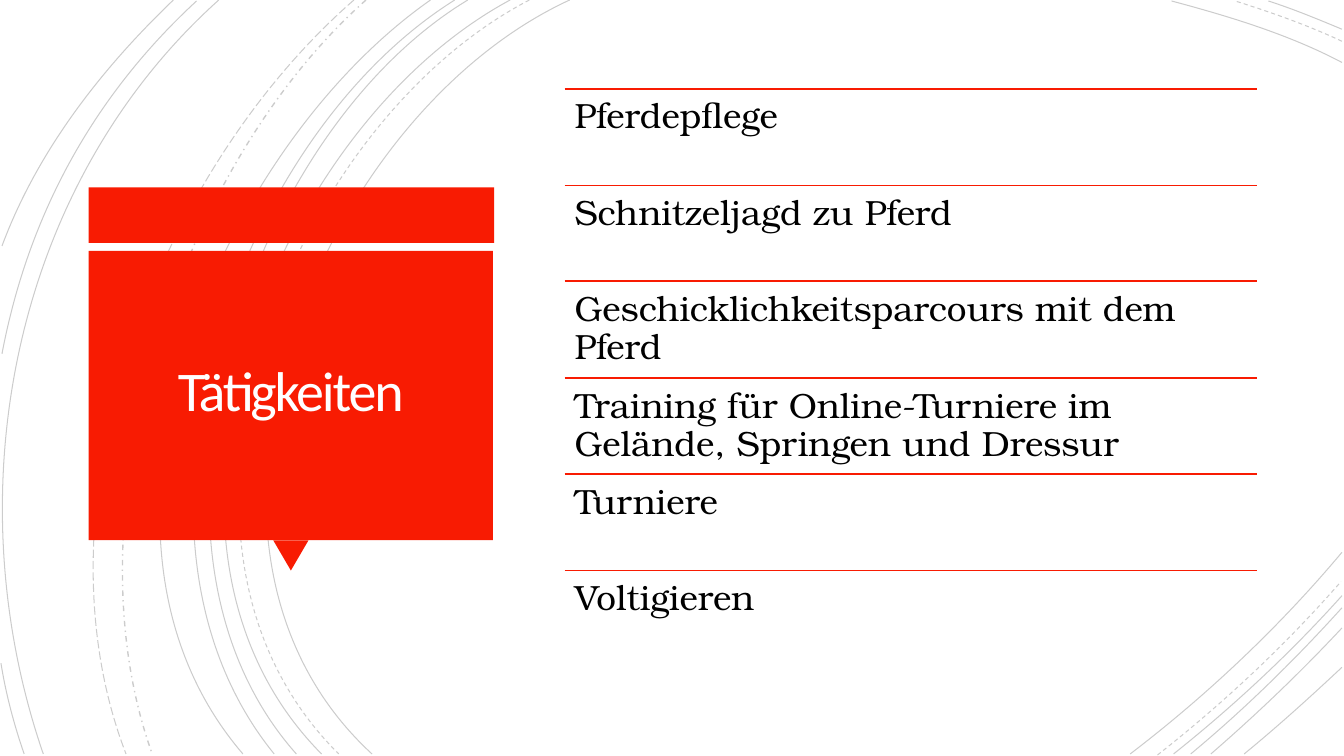
import lxml.etree
import pptx
import pptx.dml.color
import pptx.enum.dml
import pptx.enum.shapes
import pptx.enum.text
import pptx.oxml.ns
import pptx.util

PX = 9144  # 100 px to the inch
SLIDE_SIZE = (1333, 750)
RED, WHITE, BLACK = "F81B02", "FFFEFF", "000000"

TITLE = "Tätigkeiten"
ACTIVITIES = [
    "Pferdepflege",
    "Schnitzeljagd zu Pferd",
    "Geschicklichkeitsparcours mit dem Pferd",
    "Training für Online-Turniere im Gelände, Springen und Dressur",
    "Turniere",
    "Voltigieren",
]
LIST_LEFT, LIST_TOP, LIST_WIDTH, ROW_HEIGHT = 560, 88, 687, 95.6

# Background arcs by dash style: start, two control points, end
ARCS = {
    "SOLID": [
        [(565, 0), (315, 115), (143, 540), (369, 748)],
        [(1331, 62), (1278, 34), (1218, 16), (1162, 1)],
        [(1121, 748), (1197, 690), (1269, 622), (1331, 548)],
        [(506, 0), (270, 127), (110, 537), (319, 748)],
        [(1331, 29), (1307, 19), (1283, 9), (1258, 1)],
        [(1164, 748), (1223, 701), (1280, 648), (1331, 591)],
        [(464, 0), (244, 133), (110, 541), (294, 748)],
        [(1181, 748), (1234, 704), (1284, 655), (1331, 603)],
        [(451, 0), (231, 138), (97, 533), (272, 748)],
        [(1201, 748), (1246, 709), (1290, 667), (1331, 623)],
        [(427, 0), (217, 147), (53, 529), (241, 748)],
        [(1234, 748), (1267, 721), (1299, 692), (1331, 662)],
        [(217, 0), (11, 185), (-46, 490), (43, 748)],
        [(195, 1), (92, 96), (28, 214), (2, 351)],
        [(1, 658), (6, 689), (14, 719), (24, 748)],
        [(172, 0), (100, 69), (37, 150), (2, 244)],
    ],
    "DASH": [
        [(525, 0), (285, 125), (123, 537), (336, 748)],
        [(1331, 41), (1297, 25), (1260, 12), (1225, 1)],
        [(1148, 749), (1213, 698), (1275, 640), (1330, 577)],
    ],
    "DASH_DOT": [[(363, 0), (176, 166), (65, 509), (151, 748)]],
    "LONG_DASH": [[(351, 0), (157, 169), (29, 499), (125, 748)]],
}

# Preset, left, top, width, height, rotation
TITLE_PANEL = [
    ("RECTANGLE", 88, 186, 402, 55, 0),
    ("ISOSCELES_TRIANGLE", 271, 536, 35, 30, 180),
    ("RECTANGLE", 88, 249, 401, 287, 0),
]


def emu(*lengths):
    return [pptx.util.Emu(round(length * PX)) for length in lengths]


def color(hex_string):
    return pptx.dml.color.RGBColor.from_string(hex_string)


def add_child(parent, tag, **attributes):
    return lxml.etree.SubElement(parent, pptx.oxml.ns.qn(tag), attributes)


def add_arc(slide, points, dash):
    """Draw one cubic curve as a faint open line."""
    builder = slide.shapes.build_freeform(*points[0], scale=PX)
    builder.add_line_segments(points[1:], close=False)
    shape = builder.convert_to_shape()
    segments = list(shape._element.iter(pptx.oxml.ns.qn("a:lnTo")))
    curve = add_child(segments[0].getparent(), "a:cubicBezTo")
    for segment in segments:
        curve.append(segment[0])
        segment.getparent().remove(segment)
    shape.shadow.inherit = False
    shape.fill.background()
    shape.line.color.rgb = color(BLACK)
    shape.line.width = pptx.util.Pt(1 if dash == "DASH_DOT" else 0.75)
    shape.line.dash_style = pptx.enum.dml.MSO_LINE[dash]
    line_color = next(shape.line._ln.iter(pptx.oxml.ns.qn("a:srgbClr")))
    add_child(line_color, "a:alpha", val="20000")


def add_panel_part(slide, preset, left, top, width, height, rotation):
    kind = pptx.enum.shapes.MSO_SHAPE[preset]
    shape = slide.shapes.add_shape(kind, *emu(left, top, width, height))
    shape.rotation = rotation
    shape.shadow.inherit = False
    shape.fill.solid()
    shape.fill.fore_color.rgb = color(RED)
    shape.line.fill.background()


def add_rule(slide, left, right, y):
    rule = slide.shapes.add_connector(
        pptx.enum.shapes.MSO_CONNECTOR.STRAIGHT, *emu(left, y, right, y))
    rule.line.color.rgb = color(RED)
    rule.line.width = pptx.util.Pt(1.25)
    add_child(rule._element.spPr, "a:effectLst")


def add_text(slide, text, box, *, font, size, fill, inset, line_spacing,
             align="LEFT", anchor="TOP", tracking=0):
    frame = slide.shapes.add_textbox(*emu(*box)).text_frame
    frame.word_wrap = True
    frame.vertical_anchor = pptx.enum.text.MSO_ANCHOR[anchor]
    frame.margin_left, frame.margin_top, frame.margin_right, frame.margin_bottom = emu(*[inset] * 4)
    paragraph = frame.paragraphs[0]
    paragraph.alignment = pptx.enum.text.PP_ALIGN[align]
    paragraph.line_spacing = line_spacing
    run = paragraph.add_run()
    run.text = text
    run.font.name = font
    run.font.size = pptx.util.Pt(size)
    run.font.color.rgb = color(fill)
    if tracking:
        run._r.get_or_add_rPr().set("spc", str(round(tracking * 100)))


def main():
    presentation = pptx.Presentation()
    presentation.slide_width, presentation.slide_height = emu(*SLIDE_SIZE)
    slide = presentation.slides.add_slide(presentation.slide_layouts[6])

    for dash, arcs in ARCS.items():
        for points in arcs:
            add_arc(slide, points, dash)

    for part in TITLE_PANEL:
        add_panel_part(slide, *part)
    add_text(slide, TITLE, (97, 257, 383, 269), font="Calibri", size=40, fill=WHITE,
             inset=25, line_spacing=0.85, align="CENTER", anchor="MIDDLE", tracking=-1.5)

    for row, activity in enumerate(ACTIVITIES):
        top = round(LIST_TOP + row * ROW_HEIGHT)
        add_rule(slide, LIST_LEFT, LIST_LEFT + LIST_WIDTH, top)
        add_text(slide, activity, (LIST_LEFT, top, LIST_WIDTH, ROW_HEIGHT),
                 font="TeX Gyre Bonum", size=25, fill=BLACK, inset=10, line_spacing=0.9)

    presentation.save("out.pptx")


if __name__ == "__main__":
    main()
